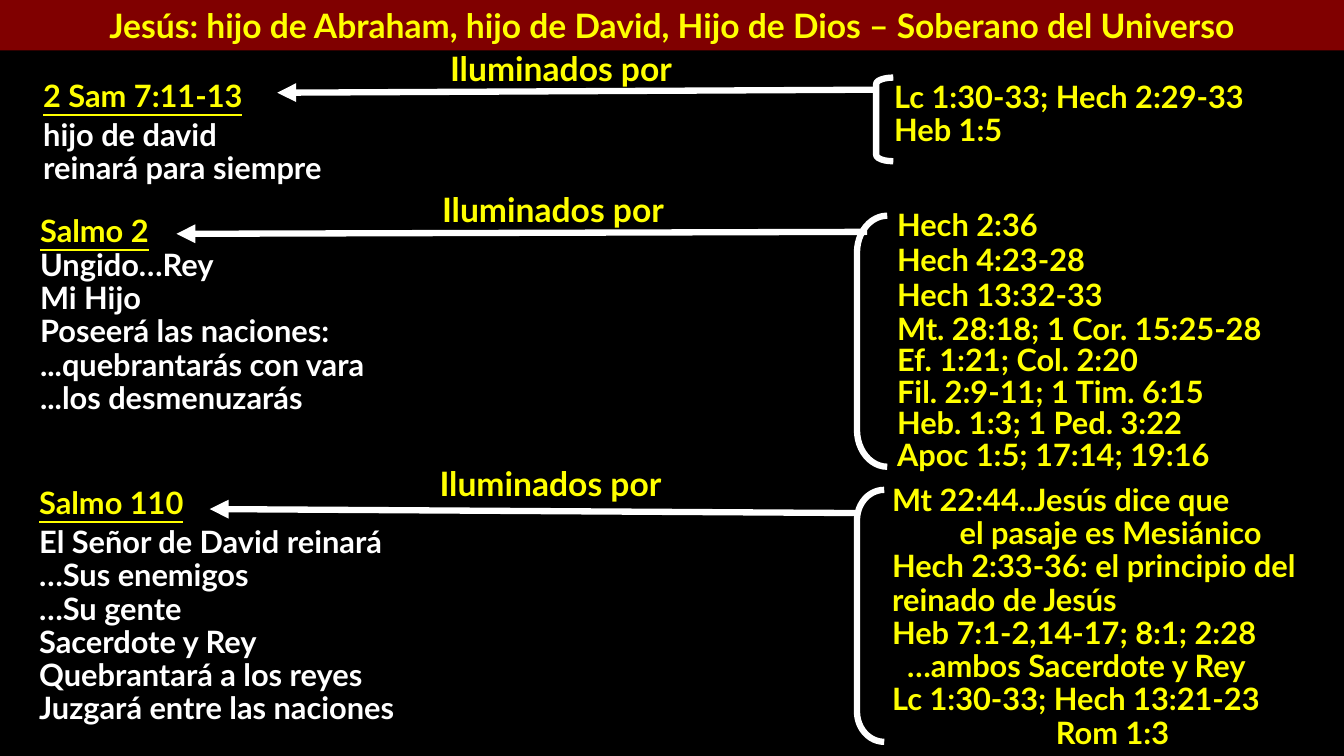
from lxml import etree
from pptx import Presentation
from pptx.dml.color import RGBColor
from pptx.enum.shapes import MSO_CONNECTOR, MSO_SHAPE
from pptx.enum.text import MSO_ANCHOR, PP_ALIGN
from pptx.oxml.ns import qn
from pptx.util import Inches, Pt

LEFT, CENTER = PP_ALIGN.LEFT, PP_ALIGN.CENTER
TOP = MSO_ANCHOR.TOP
RECT, BRACKET = MSO_SHAPE.RECTANGLE, MSO_SHAPE.LEFT_BRACKET
STRAIGHT = MSO_CONNECTOR.STRAIGHT

FONT = "Lato"
BLACK, MAROON, YELLOW, WHITE = "000000", "800000", "FFFF00", "FFFFFF"
LINE_WIDTH = 4.5

TITLE = "Jesús: hijo de Abraham, hijo de David, Hijo de Dios – Soberano del Universo"
LABEL = "Iluminados por"

# Boxes are (left, top, width, height); arrows are (x1, y1, x2, y2).
# A line of text may be (text, indent, alignment).
SECTIONS = [
    {
        "heading": ("2 Sam 7:11-13", (0.33, 0.75, 2.67, 0.43)),
        "points": (["hijo de david", "reinará para siempre"], (0.33, 1.14, 3.58, 0.77)),
        "references": [
            (["Lc 1:30-33; Hech 2:29-33", "Heb 1:5"], (8.77, 0.76, 4.51, 0.77), 0.9),
        ],
        "bracket": ((8.69, 0.77, 0.17, 0.83), 0.37),
        "arrow": (8.69, 0.89, 2.75, 0.92),
        "label": (4.08, 0.43, 2.97, 0.5),
    },
    {
        "heading": ("Salmo 2", (0.3, 2.09, 2.17, 0.43)),
        "points": (["Ungido…Rey", "Mi Hijo", "Poseerá las naciones:",
                    "...quebrantarás con vara", "...los desmenuzarás"],
                   (0.3, 2.43, 4, 1.77)),
        "references": [
            (["Hech 2:36", "Hech 4:23-28", "Hech 13:32-33"], (8.8, 2.02, 3.5, 1.16), 0.95),
            (["Mt. 28:18; 1 Cor. 15:25-28", "Ef. 1:21; Col. 2:20",
              "Fil. 2:9-11; 1 Tim. 6:15", "Heb. 1:3; 1 Ped. 3:22",
              "Apoc 1:5; 17:14; 19:16"], (8.8, 3.08, 4.4, 1.67), 0.85),
        ],
        "bracket": ((8.5, 2.14, 0.3, 2.49), 1.22),
        "arrow": (8.6, 2.3, 1.75, 2.32),
        "label": (4, 1.83, 2.97, 0.5),
    },
    {
        "heading": ("Salmo 110", (0.29, 4.79, 2.17, 0.43)),
        "points": (["El Señor de David reinará", "…Sus enemigos", "…Su gente",
                    "Sacerdote y Rey", "Quebrantará a los reyes",
                    "Juzgará entre las naciones"], (0.29, 5.18, 4.42, 2.1)),
        "references": [
            (["Mt 22:44..Jesús dice que", ("el pasaje es Mesiánico", 0.67, LEFT),
              "Hech 2:33-36: el principio del reinado de Jesús",
              "Heb 7:1-2,14-17; 8:1; 2:28", ("…ambos Sacerdote y Rey", 0.15, LEFT),
              "Lc 1:30-33; Hech 13:21-23", ("Rom 1:3", 0, CENTER)],
             (8.75, 4.76, 4.57, 2.77), 0.9),
        ],
        "bracket": ((8.5, 4.86, 0.27, 2.5), 1.11),
        "arrow": (8.5, 5.09, 2.08, 5.05),
        "label": (4, 4.54, 2.92, 0.5),
    },
]


def rgb(color):
    return RGBColor.from_string(color)


def inches(values):
    return [Inches(v) for v in values]


def write(tf, lines, color, size=22, spacing=0.9, align=LEFT, underline=None):
    tf.word_wrap = True
    tf.vertical_anchor = TOP
    for i, line in enumerate(lines):
        text, indent, line_align = (line, 0, align) if isinstance(line, str) else line
        p = tf.paragraphs[0] if i == 0 else tf.add_paragraph()
        p.alignment = line_align
        p.line_spacing = spacing
        if indent:
            p._p.get_or_add_pPr().set("marL", str(Inches(indent)))
        r = p.add_run()
        r.text = text
        r.font.name = FONT
        r.font.size = Pt(size)
        r.font.bold = True
        r.font.underline = underline
        r.font.color.rgb = rgb(color)


def add_text(slide, box, lines, color, **style):
    write(slide.shapes.add_textbox(*inches(box)).text_frame, lines, color, **style)


def add_bracket(slide, box, curve):
    sp = slide.shapes.add_shape(BRACKET, *inches(box))
    sp.adjustments[0] = curve
    sp.shadow.inherit = False
    sp.fill.background()
    sp.line.color.rgb = rgb(WHITE)
    sp.line.width = Pt(LINE_WIDTH)


def add_arrow(slide, ends):
    cxn = slide.shapes.add_connector(STRAIGHT, *inches(ends))
    cxn.line.color.rgb = rgb(WHITE)
    cxn.line.width = Pt(LINE_WIDTH)
    etree.SubElement(cxn.line._get_or_add_ln(), qn("a:tailEnd"), type="triangle")
    etree.SubElement(cxn._element.spPr, qn("a:effectLst"))


def add_title(slide):
    sp = slide.shapes.add_shape(RECT, *inches((0, 0, 13.33, 0.5)))
    sp.shadow.inherit = False
    sp.fill.solid()
    sp.fill.fore_color.rgb = rgb(MAROON)
    sp.line.fill.background()
    write(sp.text_frame, [TITLE], YELLOW, size=24, spacing=1.0, align=CENTER)


def add_section(slide, section):
    heading, box = section["heading"]
    add_text(slide, box, [heading], YELLOW, underline=True)
    points, box = section["points"]
    add_text(slide, box, points, WHITE)
    for lines, box, spacing in section["references"]:
        add_text(slide, box, lines, YELLOW, spacing=spacing)
    add_bracket(slide, *section["bracket"])
    add_arrow(slide, section["arrow"])
    add_text(slide, section["label"], [LABEL], YELLOW, size=24, spacing=1.0, align=CENTER)


def main():
    prs = Presentation()
    prs.slide_width, prs.slide_height = inches((13.33, 7.5))
    slide = prs.slides.add_slide(prs.slide_layouts[6])
    slide.background.fill.solid()
    slide.background.fill.fore_color.rgb = rgb(BLACK)
    add_title(slide)
    for section in SECTIONS:
        add_section(slide, section)
    prs.save("out.pptx")


if __name__ == "__main__":
    main()
